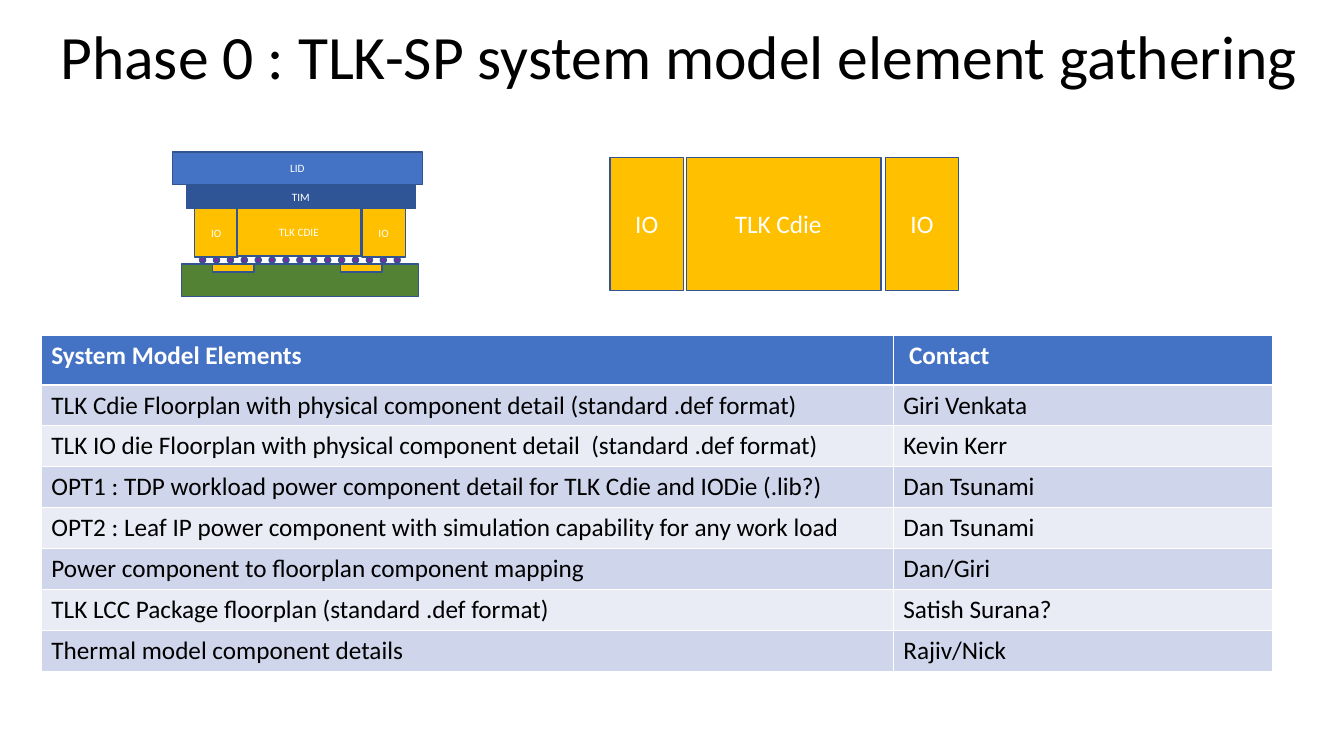
"""Build the Phase 0 slide: package cross-section, die plan and contact table."""
import pptx
import pptx.dml.color
import pptx.enum.shapes
import pptx.enum.text
import pptx.util

Inches = pptx.util.Inches
Pt = pptx.util.Pt
RGBColor = pptx.dml.color.RGBColor
MSO_SHAPE = pptx.enum.shapes.MSO_SHAPE
MSO_ANCHOR = pptx.enum.text.MSO_ANCHOR
PP_ALIGN = pptx.enum.text.PP_ALIGN

FONT = "Calibri"
BLACK = RGBColor(0x00, 0x00, 0x00)
WHITE = RGBColor(0xFF, 0xFF, 0xFF)
BLUE = RGBColor(0x44, 0x72, 0xC4)
DARK_BLUE = RGBColor(0x2F, 0x55, 0x97)
OUTLINE = RGBColor(0x32, 0x54, 0x91)
GOLD = RGBColor(0xFF, 0xC0, 0x00)
GREEN = RGBColor(0x54, 0x82, 0x35)
PURPLE = RGBColor(0x70, 0x30, 0xA0)
BAND_DARK = RGBColor(0xCF, 0xD5, 0xEA)
BAND_LIGHT = RGBColor(0xE9, 0xEB, 0xF5)

TITLE = "Phase 0 : TLK-SP system model element gathering"
PACKAGE_LAYERS = [
    ("LID", 1.71, 1.51, 2.48, 0.32, BLUE),
    ("TIM", 1.85, 1.83, 2.27, 0.24, DARK_BLUE),
    ("IO", 1.93, 2.07, 0.43, 0.48, GOLD),
    ("IO", 3.59, 2.07, 0.43, 0.48, GOLD),
    ("TLK CDIE", 2.35, 2.07, 1.23, 0.47, GOLD),
    ("", 1.8, 2.62, 2.35, 0.32, GREEN),
]
BUMP_COUNT, BUMP_FIRST, BUMP_LAST, BUMP_TOP, BUMP_SIZE = 15, 1.98, 3.91, 2.55, 0.06
BRIDGE_LEFTS = (2.11, 3.38)
DIE_PLAN = [("IO", 6.05, 0.73), ("TLK Cdie  ", 6.81, 1.93), ("IO", 8.78, 0.73)]
COLUMN_WIDTHS = (8.45, 3.76)
TABLE_HEIGHT, HEADER_HEIGHT = 3.33, 0.49
ROWS = [
    ("System Model Elements", " Contact"),
    ("TLK Cdie Floorplan with physical component detail (standard .def format)", "Giri Venkata"),
    ("TLK IO die Floorplan with physical component detail  (standard .def format)", "Kevin Kerr"),
    ("OPT1 : TDP workload power component detail for TLK Cdie and IODie (.lib?)", "Dan Tsunami"),
    ("OPT2 : Leaf IP power component with simulation capability for any work load", "Dan Tsunami"),
    ("Power component to floorplan component mapping", "Dan/Giri"),
    ("TLK LCC Package floorplan (standard .def format)", "Satish Surana?"),
    ("Thermal model component details", "Rajiv/Nick"),
]


def add_text(paragraph, text, size, color, bold=False):
    run = paragraph.add_run()
    run.text = text
    run.font.name = FONT
    run.font.size = Pt(size)
    run.font.bold = bold
    run.font.color.rgb = color


def add_block(slide, left, top, width, height, fill, text="", size=8, kind=MSO_SHAPE.RECTANGLE):
    shape = slide.shapes.add_shape(kind, Inches(left), Inches(top), Inches(width), Inches(height))
    shape.shadow.inherit = False
    shape.fill.solid()
    shape.fill.fore_color.rgb = fill
    shape.line.color.rgb = OUTLINE
    shape.line.width = Pt(1)
    if text:
        shape.text_frame.vertical_anchor = MSO_ANCHOR.MIDDLE
        paragraph = shape.text_frame.paragraphs[0]
        paragraph.alignment = PP_ALIGN.CENTER
        add_text(paragraph, text, size, WHITE)


def add_title(slide):
    box = slide.shapes.add_textbox(Inches(0.5), Inches(-0.13), Inches(12.9), Inches(1.45))
    box.text_frame.word_wrap = True
    box.text_frame.vertical_anchor = MSO_ANCHOR.MIDDLE
    paragraph = box.text_frame.paragraphs[0]
    paragraph.line_spacing = 0.9
    add_text(paragraph, TITLE, 44, BLACK)


def add_package(slide):
    for text, left, top, width, height, fill in PACKAGE_LAYERS:
        add_block(slide, left, top, width, height, fill, text)
    pitch = (BUMP_LAST - BUMP_FIRST) / (BUMP_COUNT - 1)
    for index in range(BUMP_COUNT):
        add_block(slide, BUMP_FIRST + index * pitch, BUMP_TOP, BUMP_SIZE, BUMP_SIZE,
                  PURPLE, kind=MSO_SHAPE.OVAL)
    for left in BRIDGE_LEFTS:
        add_block(slide, left, 2.62, 0.41, 0.08, GOLD)


def add_contacts(slide):
    row_height = (TABLE_HEIGHT - HEADER_HEIGHT) / (len(ROWS) - 1)
    table = slide.shapes.add_table(len(ROWS), len(COLUMN_WIDTHS), Inches(0.41), Inches(3.33),
                                   Inches(sum(COLUMN_WIDTHS)), Inches(TABLE_HEIGHT)).table
    for column, width in zip(table.columns, COLUMN_WIDTHS):
        column.width = Inches(width)
    for row_index, texts in enumerate(ROWS):
        header = row_index == 0
        table.rows[row_index].height = Inches(HEADER_HEIGHT if header else row_height)
        band = BAND_DARK if row_index % 2 else BAND_LIGHT
        for column_index, text in enumerate(texts):
            cell = table.cell(row_index, column_index)
            cell.fill.solid()
            cell.fill.fore_color.rgb = BLUE if header else band
            add_text(cell.text_frame.paragraphs[0], text, 18, WHITE if header else BLACK, header)


def main():
    presentation = pptx.Presentation()
    presentation.slide_width = Inches(13.33)
    presentation.slide_height = Inches(7.5)
    slide = presentation.slides.add_slide(presentation.slide_layouts[6])
    add_title(slide)
    add_package(slide)
    for text, left, width in DIE_PLAN:
        add_block(slide, left, 1.56, width, 1.32, GOLD, text, 18)
    add_contacts(slide)
    presentation.save("out.pptx")


if __name__ == "__main__":
    main()
